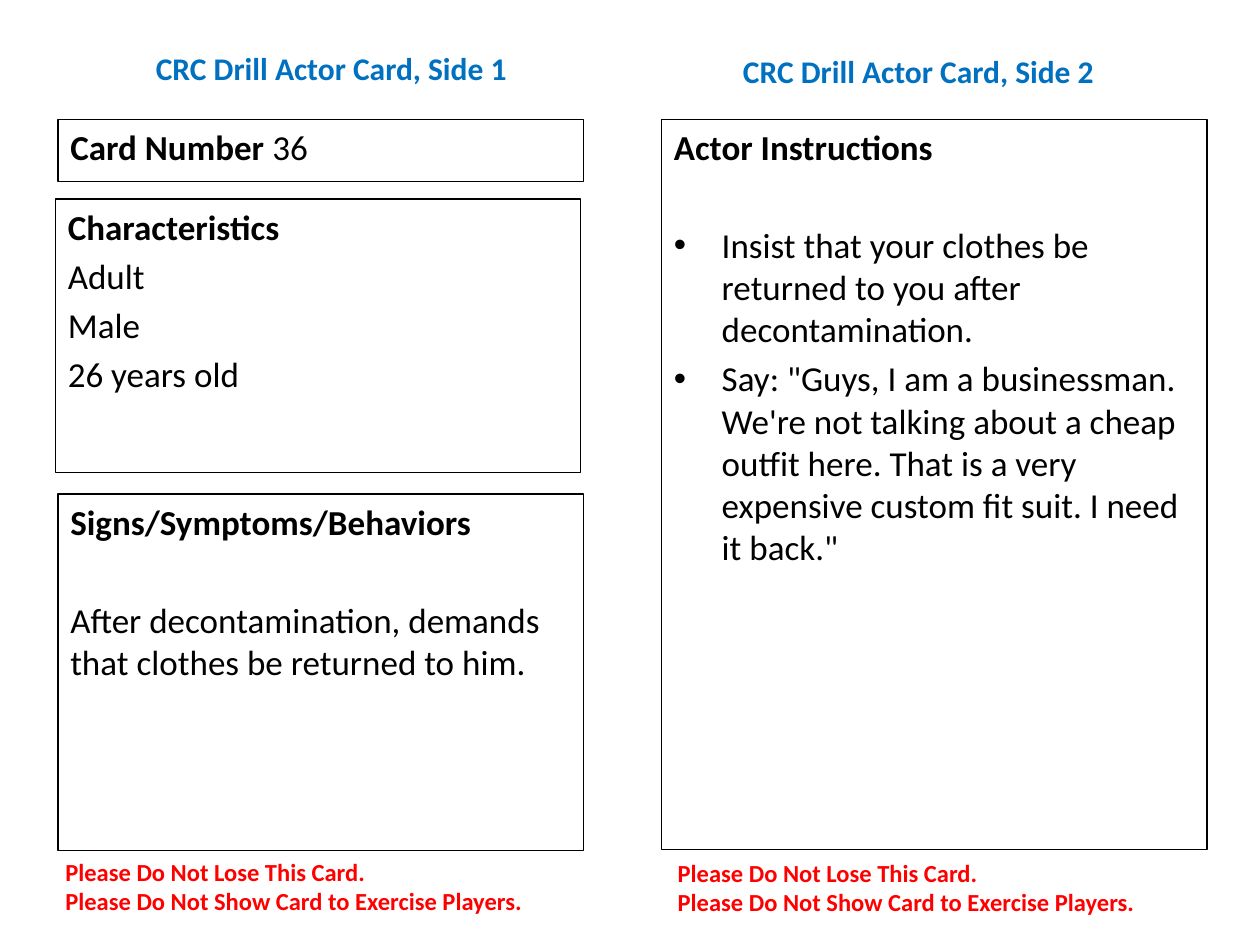
import pptx
import pptx.dml.color
import pptx.enum.shapes
import pptx.enum.text
import pptx.util
from lxml import etree
from pptx.oxml.ns import qn
from pptx.util import Inches, Pt

BLACK, BLUE, RED = "000000", "0070C0", "FF0000"
ANCHOR = pptx.enum.text.MSO_ANCHOR
ALIGN = pptx.enum.text.PP_ALIGN


def color(hex_code):
    return pptx.dml.color.RGBColor.from_string(hex_code)


class Card:
    font = "Calibri"
    heading_size, body_size, footer_size = 18, 20, 14
    line_gap = 4
    section_gap = 32  # one empty body line plus its spacing
    bullet_indent = Inches(0.38)

    def __init__(self, slide):
        self.slide = slide

    def style(self, paragraph, size, hex_code, bold, align=ALIGN.LEFT):
        paragraph.alignment = align
        for run in paragraph.runs:
            run.font.name = self.font
            run.font.size = Pt(size)
            run.font.bold = bold
            run.font.color.rgb = color(hex_code)

    def label(self, box, lines, size, hex_code, align, anchor):
        """Add unframed bold text."""
        text = self.slide.shapes.add_textbox(*map(Inches, box)).text_frame
        text.word_wrap = True
        text.vertical_anchor = anchor
        text.text = "\n".join(lines)
        for paragraph in text.paragraphs:
            self.style(paragraph, size, hex_code, True, align)

    def heading(self, box, title):
        self.label(box, [title], self.heading_size, BLUE, ALIGN.CENTER, ANCHOR.MIDDLE)

    def footer(self, box, lines):
        self.label(box, lines, self.footer_size, RED, ALIGN.LEFT, ANCHOR.TOP)

    def panel(self, box, title, lines=(), value="", spaced=False, bulleted=False):
        """Add a framed section: bold title, optional value beside it, lines below."""
        frame = self.slide.shapes.add_shape(
            pptx.enum.shapes.MSO_SHAPE.RECTANGLE, *map(Inches, box))
        frame.shadow.inherit = False
        frame.fill.background()
        frame.line.color.rgb = color(BLACK)
        frame.line.width = Pt(0.75)
        text = frame.text_frame
        text.word_wrap = True
        text.vertical_anchor = ANCHOR.TOP
        text.text = "\n".join([title, *lines])
        title_line, *body = text.paragraphs
        if value:
            title_line.add_run().text = value
        self.style(title_line, self.body_size, BLACK, True)
        title_line.space_before = Pt(self.line_gap)
        if value:
            title_line.runs[-1].font.bold = False
        for index, paragraph in enumerate(body):
            self.style(paragraph, self.body_size, BLACK, False)
            first_spaced = spaced and index == 0
            paragraph.space_before = Pt(self.section_gap if first_spaced else self.line_gap)
            if bulleted:
                self.bullet(paragraph)

    def bullet(self, paragraph):
        properties = paragraph._p.get_or_add_pPr()
        properties.set("marL", str(self.bullet_indent))
        properties.set("indent", str(-self.bullet_indent))
        etree.SubElement(properties, qn("a:buFont")).set("typeface", "Arial")
        etree.SubElement(properties, qn("a:buChar")).set("char", "•")


def main():
    deck = pptx.Presentation()
    deck.slide_width, deck.slide_height = Inches(10), Inches(7.5)
    card = Card(deck.slides.add_slide(deck.slide_layouts[6]))

    card.heading((0.42, 0.15, 4.42, 0.78), "CRC Drill Actor Card, Side 1")
    card.heading((5.08, 0.17, 4.42, 0.78), "CRC Drill Actor Card, Side 2")

    card.panel((0.46, 0.95, 4.17, 0.49), "Card Number ", value="36")
    card.panel((0.44, 1.58, 4.17, 2.17), "Characteristics",
               ["Adult", "Male", "26 years old"])
    card.panel((0.46, 3.92, 4.17, 2.83), "Signs/Symptoms/Behaviors",
               ["After decontamination, demands that clothes be returned to him."],
               spaced=True)
    card.panel((5.25, 0.95, 4.33, 5.79), "Actor Instructions",
               ["Insist that your clothes be returned to you after decontamination.",
                "Say: \"Guys, I am a businessman. We're not talking about a cheap "
                "outfit here. That is a very expensive custom fit suit. "
                "I need it back.\""],
               spaced=True, bulleted=True)

    reminder = ["Please Do Not Lose This Card.",
                "Please Do Not Show Card to Exercise Players."]
    for left, top in ((0.42, 6.75), (5.28, 6.76)):
        card.footer((left, top, 4.21, 0.57), reminder)

    deck.save("out.pptx")


if __name__ == "__main__":
    main()
